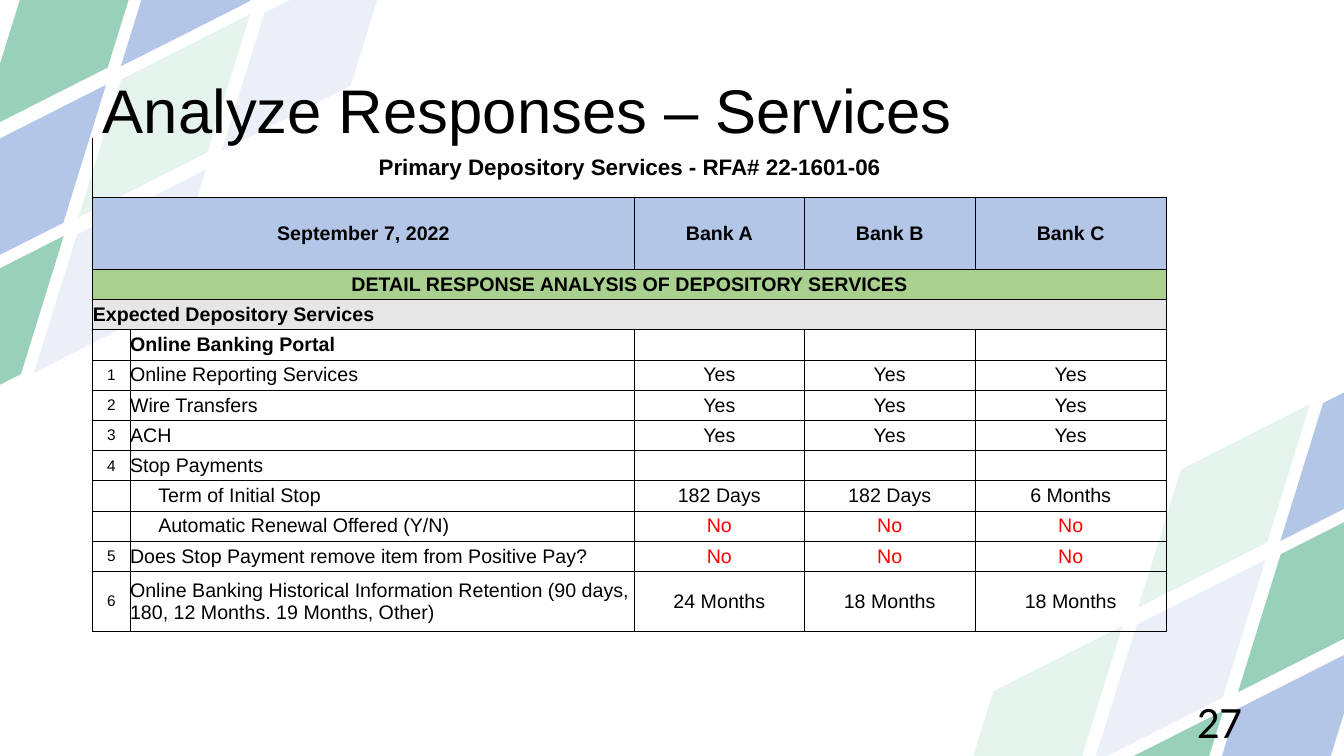
"""Build the slide that compares bank responses on depository services."""
import dataclasses

import lxml.etree
import pptx
import pptx.dml.color
import pptx.enum.shapes
import pptx.enum.text
import pptx.oxml.ns
import pptx.util

Inches = pptx.util.Inches
Align = pptx.enum.text.PP_ALIGN
qn = pptx.oxml.ns.qn


@dataclasses.dataclass(frozen=True)
class Theme:
    font: str = "Arial"
    digits: str = "Calibri"
    ink: str = "000000"
    alert: str = "FF0000"
    green: str = "008A54"
    blue: str = "4472C4"
    head: str = "B4C6E7"
    band: str = "A9D08E"
    group: str = "E7E6E6"
    title: int = 44
    page: int = 32
    name: int = 16
    body: int = 14
    index: int = 11


THEME = Theme()
PLAIN = "{2D5ABB26-0587-4C30-8999-92F81FD0307C}"
STEPS = [(0, 0), (1.41, -0.66), (0.99, 0.84), (2.41, 0.18),
         (-1.86, 2.2), (-0.44, 1.54), (-0.86, 3.04), (0.55, 2.38)]
CLUSTERS = [((11.58, 3.7), (10, 40, 40, None, 10, 10, 40, 40)),
            ((0.08, -1.01), (40, 40, 10, 10, None, 40, 40, 10))]

WIDTHS = [0.37, 5, 1.69, 1.69, 1.9]
HEIGHTS = [0.59, 0.71] + [0.3] * 10 + [0.59]
SPANS = {0: 5, 1: 2, 2: 5, 3: 2}
FILLS = {1: THEME.head, 2: THEME.band, 3: THEME.group}
GROUP, SUBHEAD = 3, 4
INDENTED = (9, 10)
ROWS = [
    ["Primary Depository Services - RFA# 22-1601-06", "", "", "", ""],
    ["September 7, 2022", "", "Bank A", "Bank B", "Bank C"],
    ["DETAIL RESPONSE ANALYSIS OF DEPOSITORY SERVICES", "", "", "", ""],
    ["Expected Depository Services", "", "", "", ""],
    ["", "Online Banking Portal", "", "", ""],
    ["1", "Online Reporting Services", "Yes", "Yes", "Yes"],
    ["2", "Wire Transfers", "Yes", "Yes", "Yes"],
    ["3", "ACH", "Yes", "Yes", "Yes"],
    ["4", "Stop Payments", "", "", ""],
    ["", "Term of Initial Stop", "182 Days", "182 Days", "6 Months"],
    ["", "Automatic Renewal Offered (Y/N)", "No", "No", "No"],
    ["5", "Does Stop Payment remove item from Positive Pay?", "No", "No", "No"],
    ["6", "Online Banking Historical Information Retention "
          "(90 days, 180, 12 Months. 19 Months, Other)",
     "24 Months", "18 Months", "18 Months"],
]


def paint(color):
    return pptx.dml.color.RGBColor.from_string(color)


def write(frame, text, size=THEME.body, font=THEME.font, color=THEME.ink,
          bold=False, align=Align.LEFT, space=None):
    para = frame.paragraphs[0]
    para.alignment = align
    if space:
        para.line_spacing = space
    if not text:
        para._p.get_or_add_endParaRPr().set("sz", str(size * 100))
        return
    run = para.add_run()
    run.text = text
    run.font.size = pptx.util.Pt(size)
    run.font.name = font
    run.font.bold = bold
    run.font.color.rgb = paint(color)


class Deck:
    def __init__(self, theme):
        self.theme = theme
        self.show = pptx.Presentation()
        self.show.slide_width = Inches(13.33)
        self.show.slide_height = Inches(7.5)
        self.slide = self.show.slides.add_slide(self.show.slide_layouts[5])
        self.shapes = self.slide.shapes

    def diamond(self, left, top, color, alpha):
        shape = self.shapes.add_shape(
            pptx.enum.shapes.MSO_SHAPE.DIAMOND,
            Inches(left), Inches(top), Inches(1.12), Inches(2.64))
        shape.rotation = 40.2
        shape.shadow.inherit = False
        shape.line.fill.background()
        shape.fill.solid()
        shape.fill.fore_color.rgb = paint(color)
        tint = shape._element.spPr.find(".//" + qn("a:srgbClr"))
        lxml.etree.SubElement(tint, qn("a:alpha"), val=str(alpha * 1000))

    def title(self, text):
        box = self.shapes.title
        box.left, box.top = Inches(0.92), Inches(0.4)
        box.width, box.height = Inches(11.5), Inches(1.45)
        self.shapes._spTree.append(box._element)
        self.frame(box.text_frame)
        write(box.text_frame, text, size=self.theme.title, space=0.9)

    def page(self, text):
        box = self.shapes.add_textbox(
            Inches(9.42), Inches(6.95), Inches(3), Inches(0.4))
        self.frame(box.text_frame)
        write(box.text_frame, text, size=self.theme.page,
              font=self.theme.digits, align=Align.RIGHT)

    def frame(self, frame):
        frame.word_wrap = True
        frame.auto_size = pptx.enum.text.MSO_AUTO_SIZE.NONE
        frame.vertical_anchor = pptx.enum.text.MSO_ANCHOR.MIDDLE

    def table(self, left, top):
        holder = self.shapes.add_table(
            len(HEIGHTS), len(WIDTHS), Inches(left), Inches(top),
            Inches(sum(WIDTHS)), Inches(sum(HEIGHTS)))
        table = holder.table
        table.first_row = table.horz_banding = False
        table._tbl.tblPr.find(qn("a:tableStyleId")).text = PLAIN
        for column, width in zip(table.columns, WIDTHS):
            column.width = Inches(width)
        for row, height in zip(table.rows, HEIGHTS):
            row.height = Inches(height)
        for row, span in SPANS.items():
            table.cell(row, 0).merge(table.cell(row, span - 1))
        for row, texts in enumerate(ROWS):
            for col, text in enumerate(texts):
                self.cell(table.cell(row, col), row, col, text)

    def cell(self, cell, row, col, text):
        cell.margin_left = Inches(0.28 if col == 1 and row in INDENTED else 0)
        cell.margin_right = cell.margin_top = cell.margin_bottom = 0
        cell.vertical_anchor = pptx.enum.text.MSO_ANCHOR.MIDDLE
        if row in FILLS:
            cell.fill.solid()
            cell.fill.fore_color.rgb = paint(FILLS[row])
        else:
            cell.fill.background()
        if not cell.is_spanned:
            self.edges(cell, row, col)
        size = self.theme.body
        if row == 0:
            size = self.theme.name
        elif row > SUBHEAD and col == 0:
            size = self.theme.index
        flush = row == GROUP or (row >= SUBHEAD and col == 1)
        write(cell.text_frame, text, size=size, bold=row <= SUBHEAD,
              color=self.theme.alert if text == "No" else self.theme.ink,
              align=Align.LEFT if flush else Align.CENTER)

    def edges(self, cell, row, col):
        last = len(WIDTHS) - 1
        sides = {
            "L": 1 if col == 0 else 0 if row == GROUP else 0.5,
            "R": 0 if row == 0 or (row == GROUP and col < last) else 0.5,
            "T": 0 if row == 0 else 1 if row <= SUBHEAD else 0.5,
            "B": 1 if row <= GROUP else 0.5,
        }
        props = cell._tc.get_or_add_tcPr()
        for place, (side, width) in enumerate(sides.items()):
            line = lxml.etree.Element(
                qn("a:ln" + side), w=str(pptx.util.Pt(width)))
            if width:
                fill = lxml.etree.SubElement(line, qn("a:solidFill"))
                lxml.etree.SubElement(
                    fill, qn("a:srgbClr"), val=self.theme.ink)
            else:
                lxml.etree.SubElement(line, qn("a:noFill"))
            props.insert(place, line)


def main():
    deck = Deck(THEME)
    for (left, top), alphas in CLUSTERS:
        for place, ((right, down), alpha) in enumerate(zip(STEPS, alphas)):
            if alpha:
                color = THEME.blue if place % 2 else THEME.green
                deck.diamond(left + right, top + down, color, alpha)
    deck.title("Analyze Responses – Services")
    deck.table(0.92, 1.37)
    deck.page("27")
    deck.show.save("out.pptx")


if __name__ == "__main__":
    main()
